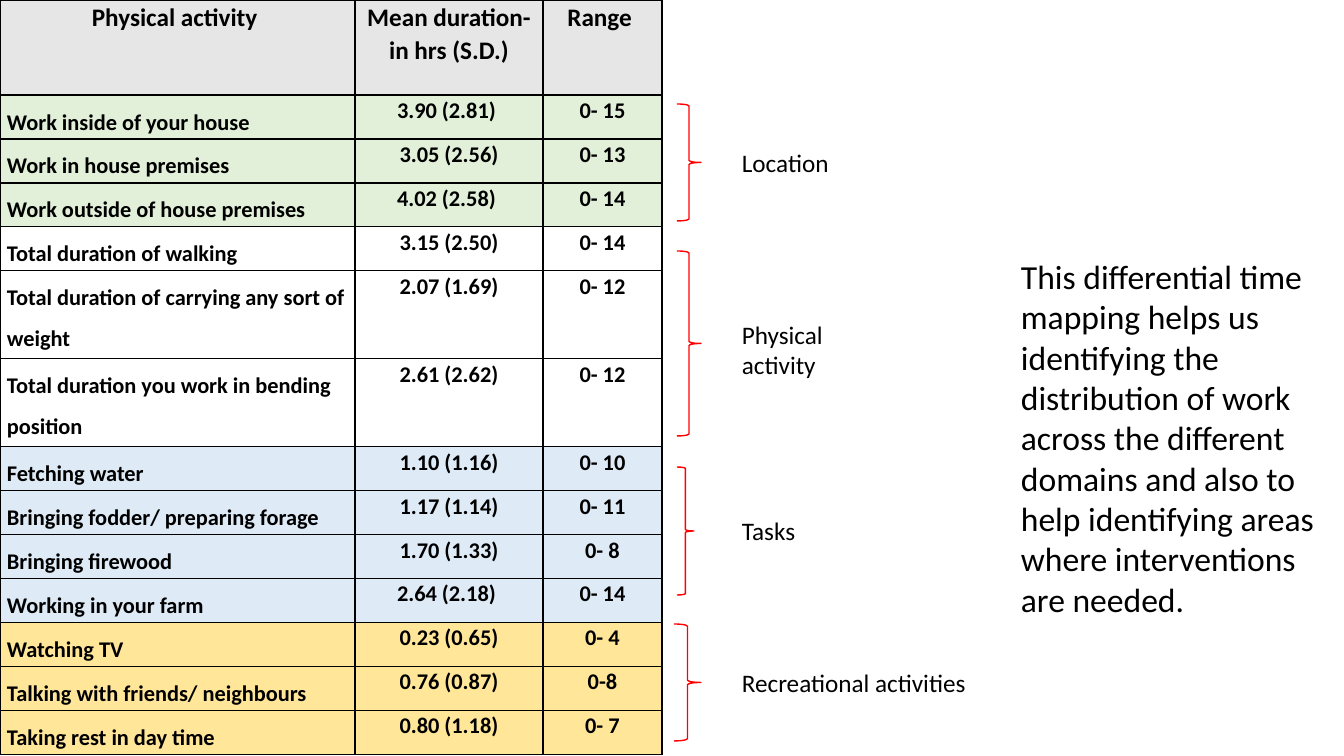
"""Build a slide with a table of activity durations, grouped by braces, and a remark."""
import pptx
import pptx.dml.color
import pptx.enum.shapes
import pptx.enum.text
import pptx.util
from lxml import etree

RGBColor = pptx.dml.color.RGBColor
BLACK = RGBColor(0x00, 0x00, 0x00)
RED = RGBColor(0xFF, 0x00, 0x00)
WHITE = RGBColor(0xFF, 0xFF, 0xFF)
GREY = RGBColor(0xE7, 0xE6, 0xE6)
GREEN = RGBColor(0xE2, 0xF0, 0xD9)
BLUE = RGBColor(0xDE, 0xEB, 0xF7)
YELLOW = RGBColor(0xFF, 0xE6, 0x99)

PX = 914400 / 100.8
CENTER = pptx.enum.text.PP_ALIGN.CENTER
LEFT = pptx.enum.text.PP_ALIGN.LEFT
DRAWING = "http://schemas.openxmlformats.org/drawingml/2006/main"


def px(*lengths):
    return [pptx.util.Emu(round(length * PX)) for length in lengths]


def write(frame, text, size, bold=False, align=LEFT, spacing=None):
    frame.word_wrap = True
    para = frame.paragraphs[0]
    para.alignment = align
    para.line_spacing = spacing
    span = para.add_run()
    span.text = text
    font_format = {"name": "Calibri", "size": pptx.util.Pt(size), "bold": bold}
    for name, value in font_format.items():
        setattr(span.font, name, value)
    span.font.color.rgb = BLACK


deck = pptx.Presentation()
deck.slide_width, deck.slide_height = px(1344, 756)
page = deck.slides.add_slide(deck.slide_layouts[6])

rows = [
    (95, GREY, "Physical activity ", "Mean duration- in hrs (S.D.)", "Range "),
    (44, GREEN, "Work inside of your house", "3.90 (2.81) ", "0- 15"),
    (44, GREEN, "Work in house premises", "3.05 (2.56)", "0- 13"),
    (44, GREEN, "Work outside of house premises", "4.02 (2.58) ", "0- 14"),
    (44, WHITE, "Total duration of walking", "3.15 (2.50)", "0- 14"),
    (88, WHITE, "Total duration of carrying any sort of weight", "2.07 (1.69)", "0- 12"),
    (88, WHITE, "Total duration you work in bending position", "2.61 (2.62)", "0- 12"),
    (44, BLUE, "Fetching water", "1.10 (1.16)", "0- 10"),
    (44, BLUE, "Bringing fodder/ preparing forage", "1.17 (1.14)", "0- 11"),
    (44, BLUE, "Bringing firewood", "1.70 (1.33)", "0- 8"),
    (44, BLUE, "Working in your farm", "2.64 (2.18) ", "0- 14"),
    (44, YELLOW, "Watching TV", "0.23 (0.65)", "0- 4"),
    (44, YELLOW, "Talking with friends/ neighbours", "0.76 (0.87)", "0-8"),
    (44, YELLOW, "Taking rest in day time", "0.80 (1.18)", "0- 7"),
]
column_widths = px(355, 188, 119)
row_heights = px(*[row[0] for row in rows])
table = page.shapes.add_table(
    len(rows), len(column_widths), 0, 0, sum(column_widths), sum(row_heights)
).table
table.first_row = table.horz_banding = False
for column, width in zip(table.columns, column_widths):
    column.width = width

side_margin, = px(7)
cell_format = {"margin_left": side_margin, "margin_right": side_margin,
               "margin_top": 0, "margin_bottom": 0}
for row_index, (_, color, *texts) in enumerate(rows):
    table.rows[row_index].height = row_heights[row_index]
    for column_index, text in enumerate(texts):
        cell = table.cell(row_index, column_index)
        for name, value in cell_format.items():
            setattr(cell, name, value)
        is_header = row_index == 0
        is_label = column_index == 0 and not is_header
        write(cell.text_frame, text, 18 if is_header else 16, True,
              LEFT if is_label else CENTER, 1.5 if is_label else 1.07)
        properties = cell._tc.get_or_add_tcPr()
        for side in ("lnL", "lnR", "lnT", "lnB"):
            border = etree.SubElement(properties, f"{{{DRAWING}}}{side}", w="12700")
            fill = etree.SubElement(border, f"{{{DRAWING}}}solidFill")
            etree.SubElement(fill, f"{{{DRAWING}}}srgbClr", val=str(BLACK))
        cell.fill.solid()
        cell.fill.fore_color.rgb = color

groups = [
    ("Location", (677, 104, 24, 117), (732, 142, 162, 40)),
    ("Physical activity", (677, 251, 24, 185), (732, 314, 176, 72)),
    ("Tasks", (677, 467, 17, 128), (732, 510, 165, 40)),
    ("Recreational activities", (674, 624, 27, 117), (732, 662, 253, 40)),
]
for label, brace_place, label_place in groups:
    brace = page.shapes.add_shape(
        pptx.enum.shapes.MSO_SHAPE.RIGHT_BRACE, *px(*brace_place))
    brace.shadow.inherit = False
    brace.fill.background()
    brace.line.color.rgb = RED
    brace.line.width = pptx.util.Pt(1)
    label_box = page.shapes.add_textbox(*px(*label_place))
    write(label_box.text_frame, label, 18)

remark_box = page.shapes.add_textbox(*px(1011, 251, 333, 377))
write(remark_box.text_frame,
      "This differential time mapping helps us identifying the distribution of work "
      "across the different domains and also to help identifying areas where "
      "interventions are needed.", 24)

deck.save("out.pptx")
